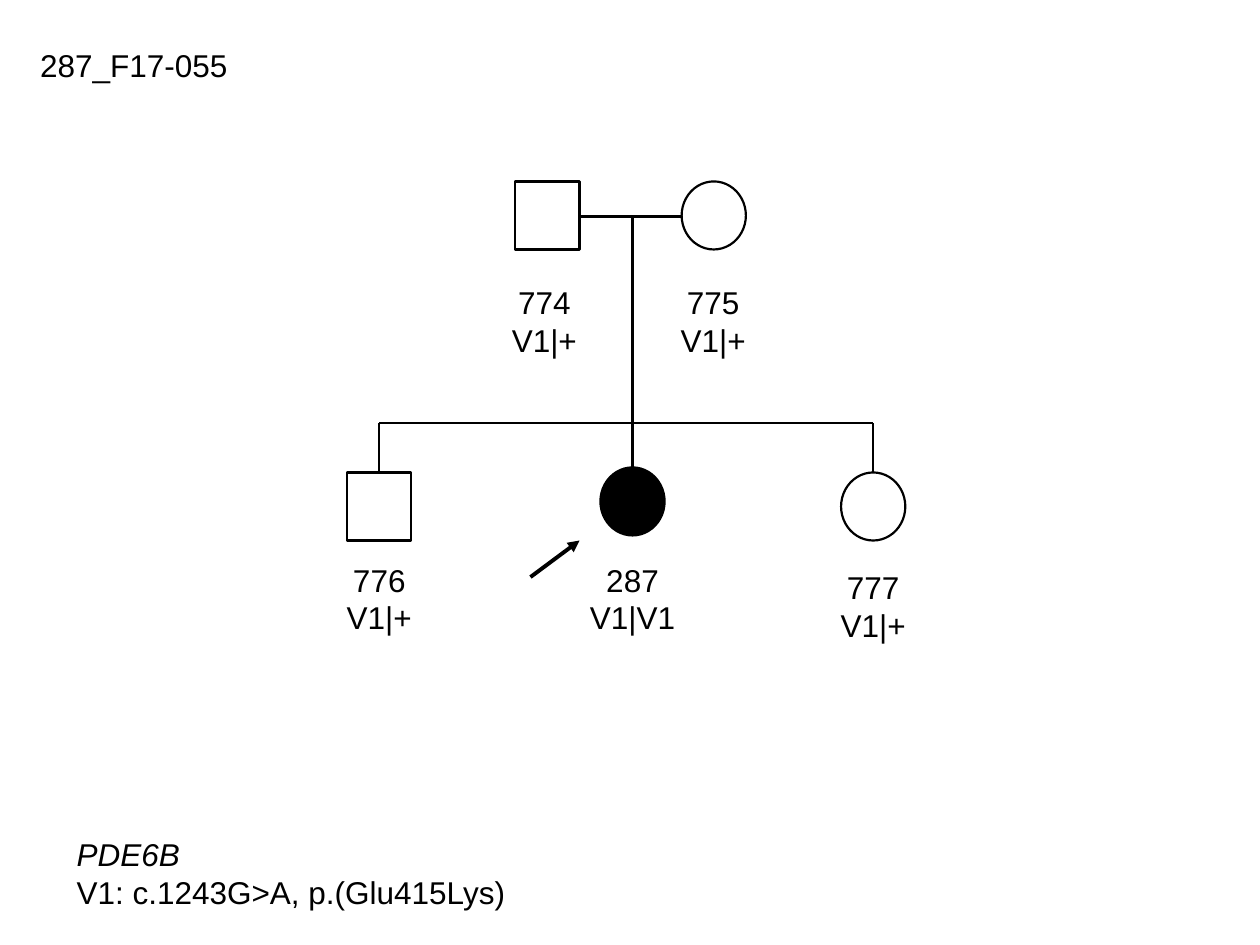
from dataclasses import dataclass

from lxml import etree
from pptx import Presentation
from pptx.dml.color import RGBColor
from pptx.enum.shapes import MSO_CONNECTOR, MSO_SHAPE
from pptx.enum.text import MSO_AUTO_SIZE, PP_ALIGN
from pptx.oxml.ns import qn
from pptx.util import Inches, Pt

MALE = MSO_SHAPE.RECTANGLE
FEMALE = MSO_SHAPE.OVAL
STRAIGHT = MSO_CONNECTOR.STRAIGHT
LEFT = PP_ALIGN.LEFT
CENTER = PP_ALIGN.CENTER
FIT_SHAPE = MSO_AUTO_SIZE.SHAPE_TO_FIT_TEXT


@dataclass(frozen=True)
class Theme:
    ink: RGBColor = RGBColor(0, 0, 0)
    paper: RGBColor = RGBColor(255, 255, 255)
    font: str = "Arial"
    text_size: float = 18
    thin: float = 1
    outline: float = 1.25
    couple: float = 1.5
    arrow: float = 2.25


THEME = Theme()
SYMBOL_WIDTH, SYMBOL_HEIGHT = 0.51, 0.54
LABEL_HEIGHT = 0.71
FATHER_X, MOTHER_X = 4.345, 5.665
BROTHER_X, PROBAND_X, SISTER_X = 3.01, 5.02, 6.93
PARENT_TOP, PROBAND_TOP, SIBLING_TOP = 1.44, 3.71, 3.75
COUPLE_Y, SIBSHIP_Y = 1.72, 3.36

MEMBERS = [
    (MALE, FATHER_X, PARENT_TOP, False, ["774", "V1|+"], 4.32, 2.2, 0.72),
    (FEMALE, MOTHER_X, PARENT_TOP, False, ["775", "V1|+"], 5.66, 2.2, 0.72),
    (MALE, BROTHER_X, SIBLING_TOP, False, ["776", "V1|+"], BROTHER_X, 4.4, 0.72),
    (FEMALE, PROBAND_X, PROBAND_TOP, True, ["287", "V1|V1"], PROBAND_X, 4.4, 0.88),
    (FEMALE, SISTER_X, SIBLING_TOP, False, ["777", "V1|+"], SISTER_X, 4.46, 0.72),
]

LINES = [
    ((FATHER_X + SYMBOL_WIDTH / 2, COUPLE_Y),
     (MOTHER_X - SYMBOL_WIDTH / 2, COUPLE_Y), THEME.couple),
    ((PROBAND_X, COUPLE_Y), (PROBAND_X, PROBAND_TOP), THEME.outline),
    ((BROTHER_X, SIBSHIP_Y), (SISTER_X, SIBSHIP_Y), THEME.thin),
    ((BROTHER_X, SIBSHIP_Y), (BROTHER_X, SIBLING_TOP), THEME.outline),
    ((SISTER_X, SIBSHIP_Y), (SISTER_X, SIBLING_TOP), THEME.outline),
]


def add_text(slide, lines, left, top, width, height, alignment=LEFT):
    text_box = slide.shapes.add_textbox(
        Inches(left), Inches(top), Inches(width), Inches(height))
    text_frame = text_box.text_frame
    text_frame.text = "\n".join(lines)
    text_frame.word_wrap = False
    text_frame.auto_size = FIT_SHAPE
    for paragraph in text_frame.paragraphs:
        paragraph.alignment = alignment
        for run in paragraph.runs:
            run.font.name = THEME.font
            run.font.size = Pt(THEME.text_size)
            run.font.color.rgb = THEME.ink
    return text_frame


def add_line(slide, start, end, weight):
    connector = slide.shapes.add_connector(
        STRAIGHT, *(Inches(value) for value in (*start, *end)))
    connector.line.color.rgb = THEME.ink
    connector.line.width = Pt(weight)
    etree.SubElement(connector._element.spPr, qn("a:effectLst"))
    return connector


def add_arrow(slide, start, end):
    connector = add_line(slide, start, end, THEME.arrow)
    line_properties = connector.line._get_or_add_ln()
    etree.SubElement(line_properties, qn("a:tailEnd"), type="triangle")


def add_symbol(slide, kind, center_x, top, affected):
    shape = slide.shapes.add_shape(
        kind, Inches(center_x - SYMBOL_WIDTH / 2), Inches(top),
        Inches(SYMBOL_WIDTH), Inches(SYMBOL_HEIGHT))
    shape.shadow.inherit = False
    shape.fill.solid()
    shape.fill.fore_color.rgb = THEME.ink if affected else THEME.paper
    shape.line.color.rgb = THEME.ink
    shape.line.width = Pt(THEME.outline)


def add_member(slide, kind, center_x, top, affected,
               lines, label_x, label_top, label_width):
    add_symbol(slide, kind, center_x, top, affected)
    add_text(slide, lines, label_x - label_width / 2, label_top,
             label_width, LABEL_HEIGHT, CENTER)


def main():
    presentation = Presentation()
    presentation.slide_width = Inches(10)
    presentation.slide_height = Inches(7.5)
    slide = presentation.slides.add_slide(presentation.slide_layouts[6])

    add_text(slide, ["287_F17-055"], 0.22, 0.32, 1.7, 0.4)
    for start, end, weight in LINES:
        add_line(slide, start, end, weight)
    for member in MEMBERS:
        add_member(slide, *member)
    add_arrow(slide, (4.21, 4.58), (4.6, 4.29))
    legend = add_text(slide, ["PDE6B", "V1: c.1243G>A, p.(Glu415Lys)"],
                      0.51, 6.58, 3.64, LABEL_HEIGHT)
    legend.paragraphs[0].runs[0].font.italic = True

    presentation.save("out.pptx")


if __name__ == "__main__":
    main()
